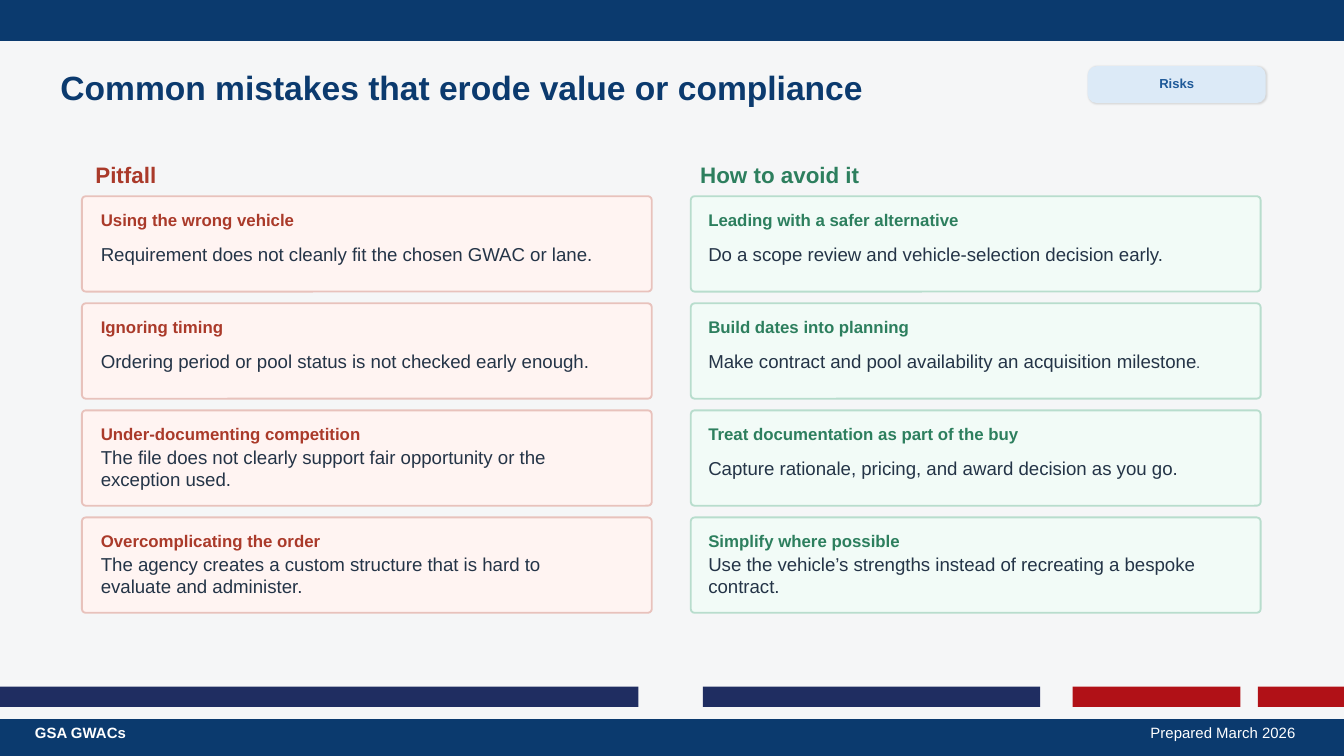
"""Build a slide pairing common ordering pitfalls with ways to avoid them."""
from dataclasses import dataclass

from lxml import etree
from pptx import Presentation
from pptx import util as u
from pptx.dml.color import RGBColor
from pptx.enum import shapes, text
from pptx.oxml import ns


@dataclass(frozen=True)
class Theme:
    font: str = "Arial"
    page: str = "F5F6F7"
    navy: str = "0B3A6E"
    stripe: str = "1F2D61"
    red: str = "B11117"
    tag_fill: str = "DCEAF7"
    tag_ink: str = "1F5A99"
    ink: str = "243447"
    white: str = "FFFFFF"
    title: int = 18
    heading: int = 12
    body: int = 10
    label: int = 9
    small: int = 8
    tag: int = 7


THEME = Theme()
WIDTH = 10
HEIGHT = WIDTH * 9 / 16
TITLE = "Common mistakes that erode value or compliance"
TAG = "Risks"
FOOTER = ("GSA GWACs", "Prepared March 2026")
STRIPES = [
    (0, 4.75, THEME.stripe),
    (5.23, 2.51, THEME.stripe),
    (7.98, 1.25, THEME.red),
    (9.36, 0.64, THEME.red),
]
COLUMNS = [
    {
        "heading": "Pitfall", "left": 0.61, "heading_left": 0.71, "text_left": 0.75,
        "ink": "AA3A2A", "fill": "FFF4F2", "line": "E8C2BC",
        "cards": [
            ("Using the wrong vehicle",
             ["Requirement does not cleanly fit the chosen GWAC or lane."]),
            ("Ignoring timing",
             ["Ordering period or pool status is not checked early enough."]),
            ("Under-documenting competition",
             ["The file does not clearly support fair opportunity or the exception used."]),
            ("Overcomplicating the order",
             ["The agency creates a custom structure that is hard to evaluate and administer."]),
        ],
    },
    {
        "heading": "How to avoid it", "left": 5.14, "heading_left": 5.21, "text_left": 5.27,
        "ink": "2D7F5E", "fill": "F2FBF7", "line": "B8DDCD",
        "cards": [
            ("Leading with a safer alternative",
             ["Do a scope review and vehicle-selection decision early."]),
            ("Build dates into planning",
             ["Make contract and pool availability an acquisition milestone", "."]),
            ("Treat documentation as part of the buy",
             ["Capture rationale, pricing, and award decision as you go."]),
            ("Simplify where possible",
             ["Use the vehicle’s strengths instead of recreating a bespoke contract."]),
        ],
    },
]
FIRST_TOP, LAST_TOP = 1.46, 3.85
CARD_WIDTH, CARD_HEIGHT, TEXT_WIDTH = 4.24, 0.71, 3.78


def place(item, left, top, width, height):
    item.left, item.top = u.Inches(left), u.Inches(top)
    item.width, item.height = u.Inches(width), u.Inches(height)


def add_text(page, spans, area, *, size, color, bold=False, align="LEFT",
             tail_size=None, box=None):
    box = box or page.shapes.add_textbox(0, 0, 0, 0)
    place(box, *area)
    frame = box.text_frame
    frame.word_wrap = True
    frame.auto_size = text.MSO_AUTO_SIZE.NONE
    frame.vertical_anchor = text.MSO_ANCHOR.MIDDLE
    frame.margin_left = frame.margin_right = 0
    frame.margin_top = frame.margin_bottom = 0
    para = frame.paragraphs[0]
    para.alignment = getattr(text.PP_ALIGN, align)
    for index, words in enumerate(spans):
        span = para.add_run()
        span.text = words
        span.font.name = THEME.font
        span.font.size = u.Pt(tail_size if index and tail_size else size)
        span.font.bold = bold
        span.font.color.rgb = RGBColor.from_string(color)


def add_panel(page, area, fill, line=None, corner=None):
    kind = shapes.MSO_SHAPE.RECTANGLE if corner is None else shapes.MSO_SHAPE.ROUNDED_RECTANGLE
    panel = page.shapes.add_shape(kind, *map(u.Inches, area))
    panel.shadow.inherit = False
    if corner is not None:
        panel.adjustments[0] = corner
    panel.fill.solid()
    panel.fill.fore_color.rgb = RGBColor.from_string(fill)
    if line:
        panel.line.color.rgb = RGBColor.from_string(line)
        panel.line.width = u.Pt(1)
    else:
        panel.line.fill.background()
    return panel


def add_soft_shadow(panel):
    effects = panel.element.spPr.find(ns.qn("a:effectLst"))
    shadow = etree.SubElement(effects, ns.qn("a:outerShdw"), blurRad=str(u.Pt(1)),
                              dist=str(u.Pt(0.5)), dir=str(45 * 60000),
                              algn="tl", rotWithShape="0")
    color = etree.SubElement(shadow, ns.qn("a:srgbClr"), val="000000")
    etree.SubElement(color, ns.qn("a:alpha"), val="12000")


def add_frame(page):
    page.background.fill.solid()
    page.background.fill.fore_color.rgb = RGBColor.from_string(THEME.page)
    for left, width, color in STRIPES:
        add_panel(page, (left, 5.11, width, 0.15), color)
    for top, height in ((0, 0.3), (5.36, HEIGHT - 5.36)):
        add_panel(page, (0, top, WIDTH, height), THEME.navy, THEME.navy)
    owner, date = FOOTER
    add_text(page, [owner], (0.26, 5.38, 2.25, 0.14), size=THEME.small,
             color=THEME.white, bold=True)
    add_text(page, [date], (7.99, 5.38, 1.65, 0.14), size=THEME.small,
             color=THEME.white, align="RIGHT")


def add_header(page):
    add_text(page, [TITLE], (0.45, 0.47, 6.53, 0.36), size=THEME.title,
             color=THEME.navy, bold=True, box=page.shapes.title)
    add_soft_shadow(add_panel(page, (8.1, 0.5, 1.31, 0.26), THEME.tag_fill,
                              THEME.tag_fill, corner=0.23))
    add_text(page, [TAG], (8.21, 0.57, 1.09, 0.1), size=THEME.tag,
             color=THEME.tag_ink, bold=True, align="CENTER")


def add_column(page, column):
    add_text(page, [column["heading"]], (column["heading_left"], 1.22, 2.25, 0.15),
             size=THEME.heading, color=column["ink"], bold=True)
    left = column["text_left"]
    pitch = (LAST_TOP - FIRST_TOP) / (len(column["cards"]) - 1)
    for row, (label, advice) in enumerate(column["cards"]):
        top = FIRST_TOP + row * pitch
        add_panel(page, (column["left"], top, CARD_WIDTH, CARD_HEIGHT),
                  column["fill"], column["line"], corner=0.04)
        add_text(page, [label], (left, top + 0.11, 2.68, 0.13), size=THEME.label,
                 color=column["ink"], bold=True)
        add_text(page, advice, (left, top + 0.29, TEXT_WIDTH, 0.28), size=THEME.body,
                 color=THEME.ink, tail_size=THEME.small)


def main():
    deck = Presentation()
    deck.slide_width, deck.slide_height = u.Inches(WIDTH), u.Inches(HEIGHT)
    page = deck.slides.add_slide(deck.slide_layouts[5])
    add_frame(page)
    add_header(page)
    for column in COLUMNS:
        add_column(page, column)
    deck.save("out.pptx")


if __name__ == "__main__":
    main()
